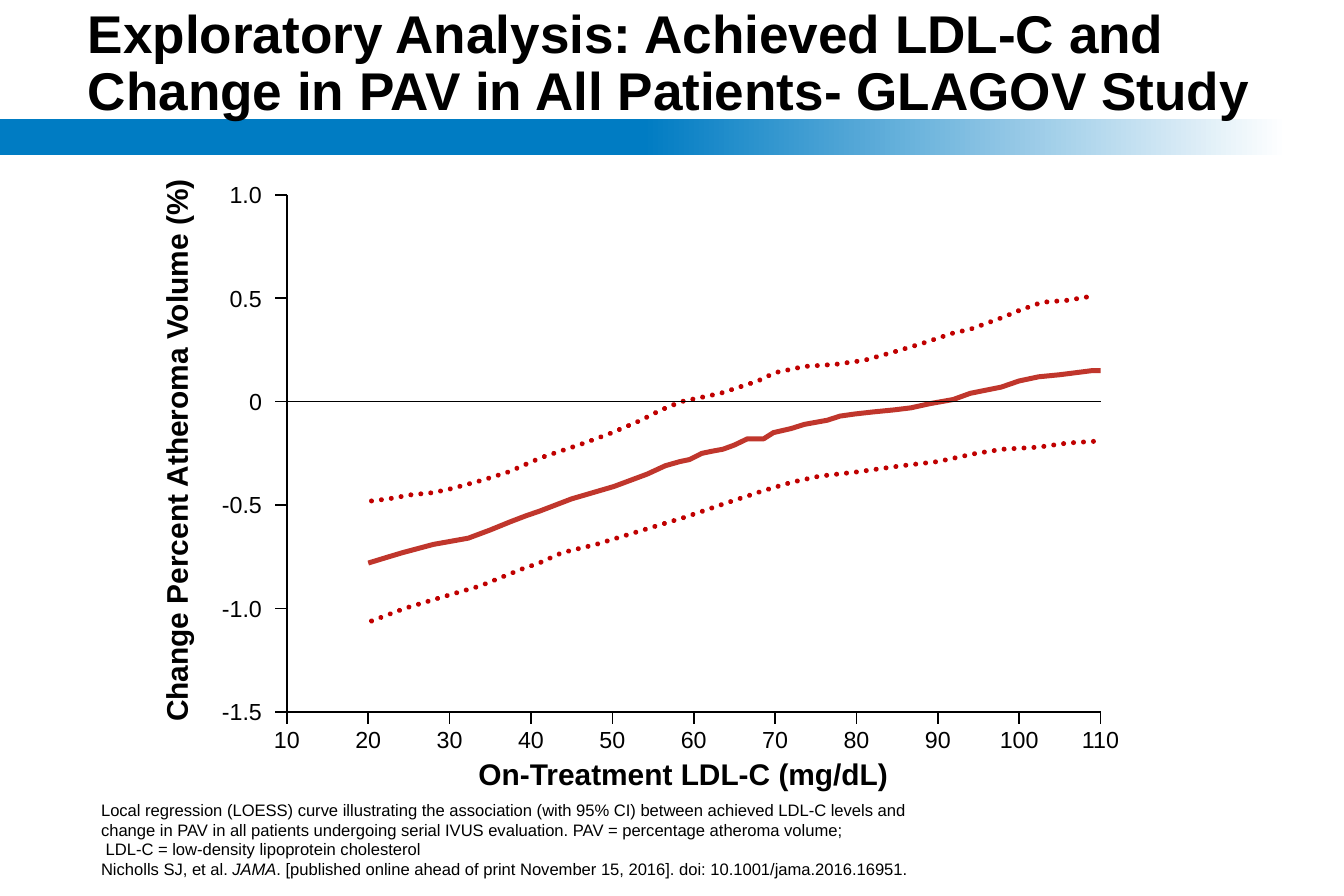
import pptx
import pptx.dml.color
import pptx.enum.dml
import pptx.enum.shapes
import pptx.enum.text
import pptx.oxml.ns
import pptx.util
from lxml import etree
from pptx.util import Cm

FONT = "Arial"
BLACK = "000000"
WHITE = "FFFFFF"
BAND_BLUE = "007CC3"
DARK_RED = "C00000"
CURVE_RED = "C0362C"

PLOT_LEFT, PLOT_TOP, PLOT_WIDTH, PLOT_HEIGHT = 6.1, 4.14, 17.3, 11
LDL_MIN, LDL_MAX, LDL_STEP = 10, 110, 10
PAV_LABELS = ["1.0", "0.5", "0", "-0.5", "-1.0", "-1.5"]
PAV_MAX, PAV_MIN = 1, -1.5
TICK = 0.25

UPPER_LIMIT = [
    (20.4, -0.48), (22.5, -0.47), (25.3, -0.45), (28, -0.44), (30.3, -0.42),
    (34, -0.38), (37.2, -0.34), (41.3, -0.27), (46.6, -0.2), (50, -0.15),
    (53.5, -0.09), (56, -0.04), (58.5, 0), (63.3, 0.04), (67.9, 0.1), (70, 0.14),
    (73.6, 0.17), (77.4, 0.18), (81, 0.2), (84.6, 0.24), (88, 0.28), (91.8, 0.33),
    (94, 0.35), (97.5, 0.4), (100, 0.44), (102.8, 0.48), (106, 0.49), (109, 0.51),
]
LOWER_LIMIT = [
    (20.4, -1.06), (24.4, -1), (28.6, -0.95), (33.8, -0.89), (38.8, -0.81),
    (41, -0.78), (43.8, -0.73), (48, -0.69), (53.8, -0.62), (58.8, -0.56),
    (64, -0.49), (68.6, -0.43), (72, -0.39), (75.5, -0.36), (80, -0.34),
    (85.5, -0.31), (90, -0.29), (94.7, -0.25), (98, -0.23), (102.4, -0.22),
    (106, -0.2), (110, -0.19),
]
LOESS_CURVE = [
    (20, -0.78), (22.5, -0.75), (24.2, -0.73), (28, -0.69), (32.3, -0.66),
    (35, -0.62), (37.5, -0.58), (39.5, -0.55), (41, -0.53), (45, -0.47),
    (50.2, -0.41), (54.3, -0.35), (56.5, -0.31), (58.3, -0.29), (59.5, -0.28),
    (61, -0.25), (62.2, -0.24), (63.6, -0.23), (65, -0.21), (66.6, -0.18),
    (68.6, -0.18), (69.8, -0.15), (72, -0.13), (73.6, -0.11), (76.4, -0.09),
    (78, -0.07), (79.8, -0.06), (82, -0.05), (84.6, -0.04), (86.7, -0.03),
    (89, -0.01), (91.9, 0.01), (94, 0.04), (97.8, 0.07), (100, 0.1),
    (102.4, 0.12), (105, 0.13), (107, 0.14), (109, 0.15), (110, 0.15),
]


def colour(value):
    return pptx.dml.color.RGBColor.from_string(value)


def plot_x(ldl):
    return PLOT_LEFT + PLOT_WIDTH * (ldl - LDL_MIN) / (LDL_MAX - LDL_MIN)


def plot_y(change):
    return PLOT_TOP + PLOT_HEIGHT * (PAV_MAX - change) / (PAV_MAX - PAV_MIN)


def add_text(page, place, paragraphs, size, bold=False, align="LEFT",
             anchor="TOP", wrap=True, rotation=0, spacing=1.0):
    box = page.shapes.add_textbox(*map(Cm, place))
    box.rotation = rotation
    frame = box.text_frame
    frame.word_wrap = wrap
    frame.vertical_anchor = getattr(pptx.enum.text.MSO_ANCHOR, anchor)
    for index, spans in enumerate(paragraphs):
        para = frame.paragraphs[0] if index == 0 else frame.add_paragraph()
        para.alignment = getattr(pptx.enum.text.PP_ALIGN, align)
        para.line_spacing = spacing
        for text, italic in spans:
            for number, line in enumerate(text.split("\n")):
                if number:
                    para.add_line_break()
                span = para.add_run()
                span.text = line
                span.font.name = FONT
                span.font.size = pptx.util.Pt(size)
                span.font.bold = bold
                span.font.italic = italic
                span.font.color.rgb = colour(BLACK)


def add_band(page):
    band = page.shapes.add_shape(
        pptx.enum.shapes.MSO_SHAPE.RECTANGLE, Cm(0), Cm(2.54), Cm(27.36), Cm(0.76))
    band.shadow.inherit = False
    band.line.fill.background()
    band.fill.gradient()
    band.fill.gradient_angle = 180
    stops = band.fill.gradient_stops
    for stop, position, value in zip(stops, (0, 0.5), (WHITE, BAND_BLUE)):
        stop.position = position
        stop.color.rgb = colour(value)


def add_line(page, start_x, start_y, end_x, end_y):
    line = page.shapes.add_connector(
        pptx.enum.shapes.MSO_CONNECTOR.STRAIGHT,
        Cm(start_x), Cm(start_y), Cm(end_x), Cm(end_y))
    line.line.color.rgb = colour(BLACK)
    line.line.width = pptx.util.Pt(1)
    etree.SubElement(line._element.spPr, pptx.oxml.ns.qn("a:effectLst"))


def add_curve(page, points, value, dotted=False):
    places = [(Cm(plot_x(ldl)), Cm(plot_y(change))) for ldl, change in points]
    builder = page.shapes.build_freeform(*places[0])
    builder.add_line_segments(places[1:], close=False)
    curve = builder.convert_to_shape()
    curve.shadow.inherit = False
    curve.fill.background()
    curve.line.color.rgb = colour(value)
    curve.line.width = pptx.util.Pt(3)
    if dotted:
        curve.line.dash_style = pptx.enum.dml.MSO_LINE.ROUND_DOT
        curve._element.xpath("p:spPr/a:ln")[0].set("cap", "rnd")


def add_ldl_axis(page):
    bottom = plot_y(PAV_MIN)
    add_line(page, PLOT_LEFT, bottom, plot_x(LDL_MAX), bottom)
    for ldl in range(LDL_MIN, LDL_MAX + 1, LDL_STEP):
        across = plot_x(ldl)
        add_line(page, across, bottom, across, bottom + TICK)
        add_text(page, (across - 0.75, 15.29, 1.5, 0.86), [[(str(ldl), False)]],
                 14, align="CENTER")


def add_pav_axis(page):
    add_line(page, PLOT_LEFT, PLOT_TOP, PLOT_LEFT, plot_y(PAV_MIN))
    for label in PAV_LABELS:
        height = plot_y(float(label))
        add_line(page, PLOT_LEFT - TICK, height, PLOT_LEFT, height)
        add_text(page, (4.22, height - 0.43, 1.6, 0.86), [[(label, False)]],
                 14, align="RIGHT")


def main():
    deck = pptx.Presentation()
    deck.slide_width = Cm(28.575)
    deck.slide_height = Cm(19.05)
    page = deck.slides.add_slide(deck.slide_layouts[6])

    add_band(page)
    add_text(page, (1.62, 0.1, 25.37, 2.62), [[(
        "Exploratory Analysis: Achieved LDL-C and Change in PAV in All Patients- "
        "GLAGOV Study", False)]], 32, bold=True, anchor="BOTTOM", spacing=0.9)
    add_text(page, (1.9, 16.86, 18.03, 1.96), [
        [("Local regression (LOESS) curve illustrating the association (with 95% CI) "
          "between achieved LDL-C levels and change in PAV in all patients undergoing "
          "serial IVUS evaluation. PAV = percentage atheroma volume;\n"
          " LDL-C = low-density lipoprotein cholesterol", False)],
        [("Nicholls SJ, et al. ", False), ("JAMA", True),
         (". [published online ahead of print November 15, 2016]. "
          "doi: 10.1001/jama.2016.16951.", False)],
    ], 10, anchor="BOTTOM")
    add_ldl_axis(page)
    add_pav_axis(page)
    add_text(page, (-2.34, 9.07, 12.17, 1.02),
             [[("Change Percent Atheroma Volume (%)", False)]],
             18, bold=True, align="CENTER", wrap=False, rotation=270)
    add_text(page, (9.87, 15.94, 9.32, 1.02),
             [[("On-Treatment LDL-C (mg/dL)", False)]],
             18, bold=True, align="CENTER", wrap=False)
    add_curve(page, UPPER_LIMIT, DARK_RED, dotted=True)
    add_curve(page, LOWER_LIMIT, DARK_RED, dotted=True)
    add_curve(page, LOESS_CURVE, CURVE_RED)
    add_line(page, PLOT_LEFT, plot_y(0), plot_x(LDL_MAX), plot_y(0))

    deck.save("out.pptx")


if __name__ == "__main__":
    main()
